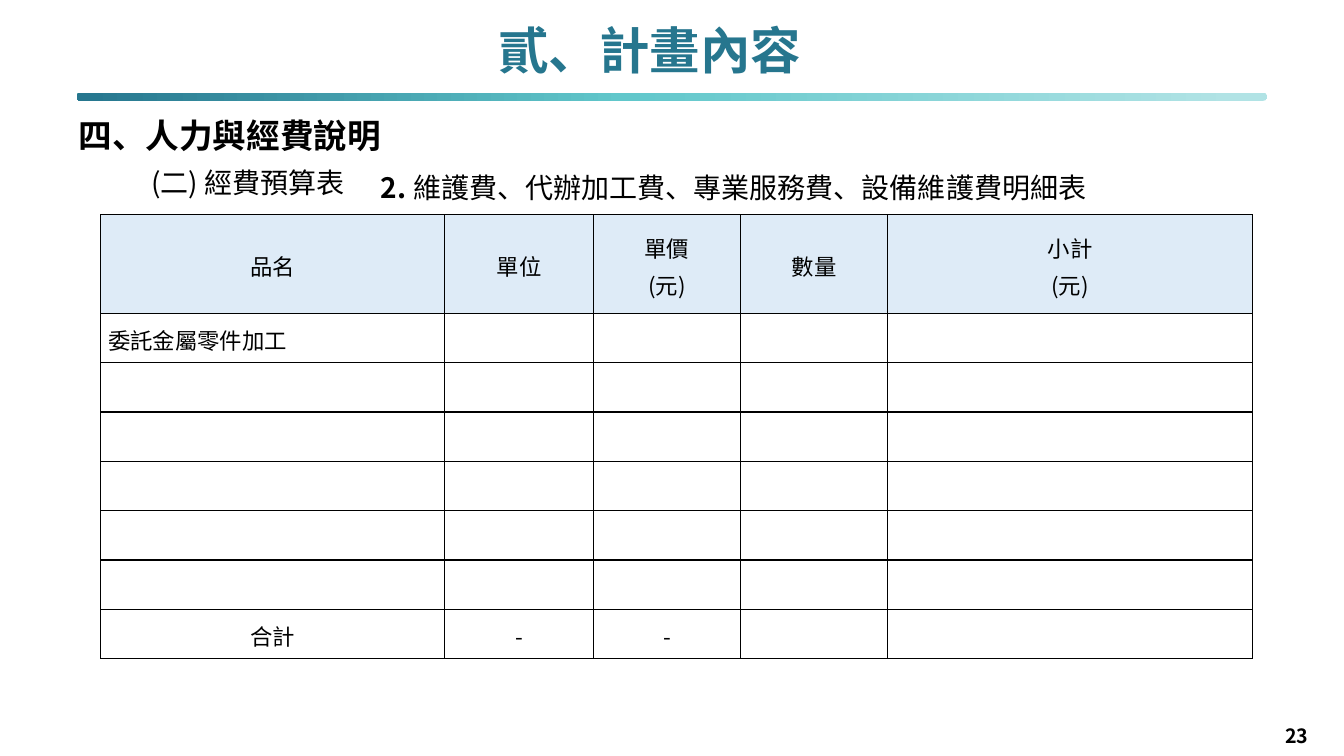
import dataclasses

import lxml.etree
import pptx
import pptx.dml.color
import pptx.enum.shapes
import pptx.enum.text
import pptx.oxml
import pptx.oxml.ns
import pptx.util

ALIGN = pptx.enum.text.PP_ALIGN
ANCHOR = pptx.enum.text.MSO_ANCHOR
WIDTH = pptx.util.Inches(13.33)
HEIGHT = pptx.util.Inches(7.5)


@dataclasses.dataclass(frozen=True)
class Theme:
    font: str = "Noto Sans CJK SC"
    ink: str = "000000"
    accent: str = "26768E"
    header: str = "DEEBF7"
    rule_stops: tuple = ((3, "B1E3E5"), (54, "61C7CB"), (100, "26768E"))
    title: int = 36
    section: int = 24
    body: int = 20
    table: int = 16
    page: int = 14
    cell_leading: int = 26
    border: int = 1


THEME = Theme()


def across(percent):
    return round(WIDTH * percent / 100)


def down(percent):
    return round(HEIGHT * percent / 100)


def area(left, top, width, height):
    return across(left), down(top), across(width), down(height)


def style_font(font, size, color=THEME.ink, bold=False):
    font.size = pptx.util.Pt(size)
    font.bold = bold
    font.name = THEME.font
    font.color.rgb = pptx.dml.color.RGBColor.from_string(color)


def style_run(run, size, color=THEME.ink, bold=False):
    style_font(run.font, size, color, bold)
    east_asian = lxml.etree.SubElement(run.font._element, pptx.oxml.ns.qn("a:ea"))
    east_asian.set("typeface", THEME.font)


def add_line(slide, place, pieces, size, color=THEME.ink, align=ALIGN.LEFT,
             spacing=None, indent=(0, 0), anchor=ANCHOR.TOP, wrap=True, grow=True):
    frame = slide.shapes.add_textbox(*area(*place)).text_frame
    frame.word_wrap = wrap
    frame.vertical_anchor = anchor
    if grow:
        frame.auto_size = pptx.enum.text.MSO_AUTO_SIZE.SHAPE_TO_FIT_TEXT
    paragraph = frame.paragraphs[0]
    paragraph.alignment = align
    paragraph.line_spacing = spacing
    margin, first_line = indent
    properties = paragraph._p.get_or_add_pPr()
    properties.set("marL", str(across(margin)))
    properties.set("indent", str(across(first_line)))
    for wording, bold in pieces:
        run = paragraph.add_run()
        run.text = wording
        style_run(run, size, color, bold)


def add_rule(slide, place):
    rule = slide.shapes.add_shape(
        pptx.enum.shapes.MSO_SHAPE.ROUNDED_RECTANGLE, *area(*place))
    rule.adjustments[0] = 0.5
    rule.shadow.inherit = False
    rule.line.fill.background()
    rule.fill.gradient()
    rule.fill.gradient_angle = 180
    stops = rule._element.spPr.find(".//" + pptx.oxml.ns.qn("a:gsLst"))
    for stop in list(stops):
        stops.remove(stop)
    for position, color in THEME.rule_stops:
        stop = lxml.etree.SubElement(
            stops, pptx.oxml.ns.qn("a:gs"), pos=str(position * 1000))
        lxml.etree.SubElement(stop, pptx.oxml.ns.qn("a:srgbClr"), val=color)


def border_cell(cell):
    properties = cell._tc.get_or_add_tcPr()
    width = pptx.util.Pt(THEME.border)
    for position, side in enumerate(("lnL", "lnR", "lnT", "lnB")):
        properties.insert(position, pptx.oxml.parse_xml(
            f'<a:{side} {pptx.oxml.ns.nsdecls("a")} w="{width}"><a:solidFill>'
            f'<a:srgbClr val="{THEME.ink}"/></a:solidFill></a:{side}>'))


def fill_cell(cell, wording, align, color):
    cell.margin_left = cell.margin_right = across(0.55)
    cell.margin_top = cell.margin_bottom = 0
    cell.vertical_anchor = ANCHOR.MIDDLE
    if color:
        cell.fill.solid()
        cell.fill.fore_color.rgb = pptx.dml.color.RGBColor.from_string(color)
    else:
        cell.fill.background()
    cell.text_frame.text = wording
    for paragraph in cell.text_frame.paragraphs:
        paragraph.alignment = align
        paragraph.line_spacing = pptx.util.Pt(THEME.cell_leading)
        style_font(paragraph.font, THEME.table)
        for run in paragraph.runs:
            style_run(run, THEME.table)
    border_cell(cell)


def add_budget(slide, left, top, columns, row_height, rows):
    heights = [2 * row_height] + [row_height] * (len(rows) - 1)
    budget = slide.shapes.add_table(
        len(rows), len(columns), *area(left, top, sum(columns), sum(heights))).table
    for column, width in zip(budget.columns, columns):
        column.width = across(width)
    for row, height in zip(budget.rows, heights):
        row.height = down(height)
    for row_index, wordings in enumerate(rows):
        is_header = row_index == 0
        is_total = row_index == len(rows) - 1
        for column_index, wording in enumerate(wordings):
            align = ALIGN.CENTER if is_header or is_total else ALIGN.JUSTIFY
            fill_cell(budget.cell(row_index, column_index), wording, align,
                      THEME.header if is_header else None)


def main():
    deck = pptx.Presentation()
    deck.slide_width, deck.slide_height = WIDTH, HEIGHT
    slide = deck.slides.add_slide(deck.slide_layouts[6])

    add_rule(slide, (5.7, 12.27, 88.6, 1.07))
    add_line(slide, (94.9, 95.07, 5.93, 4.93), [("23", True)], THEME.page, grow=False)
    add_line(slide, (36.23, 2.8, 24.23, 8.67), [("貳、計畫內容", True)], THEME.title,
             color=THEME.accent, align=ALIGN.CENTER, spacing=0.9, wrap=False)
    add_line(slide, (5.1, 15.33, 62.34, 5.87), [("四、人力與經費說明", True)],
             THEME.section, spacing=pptx.util.Pt(24), anchor=ANCHOR.MIDDLE)
    add_line(slide, (7.5, 21.2, 65.72, 5.87), [("(二) 經費預算表", False)],
             THEME.body, indent=(3, 0))

    header = ["品名", "單位", "單價\n(元)", "數量", "小計\n(元)"]
    first_item = ["委託金屬零件加工"] + [""] * 4
    blank_items = [[""] * 5 for _ in range(5)]
    total = ["合計", "-", "-", "", ""]
    add_budget(slide, 7.5, 28.4, (25.6, 11.05, 10.95, 10.95, 27.15), 6.53,
               [header, first_item, *blank_items, total])

    add_line(slide, (26.18, 19.73, 73.52, 7.2),
             [("2. ", True), ("維護費、代辦加工費、專業服務費、設備維護費明細表", False)],
             THEME.body, align=ALIGN.JUSTIFY, spacing=1.5, indent=(6.38, -4.95))
    deck.save("out.pptx")


if __name__ == "__main__":
    main()
